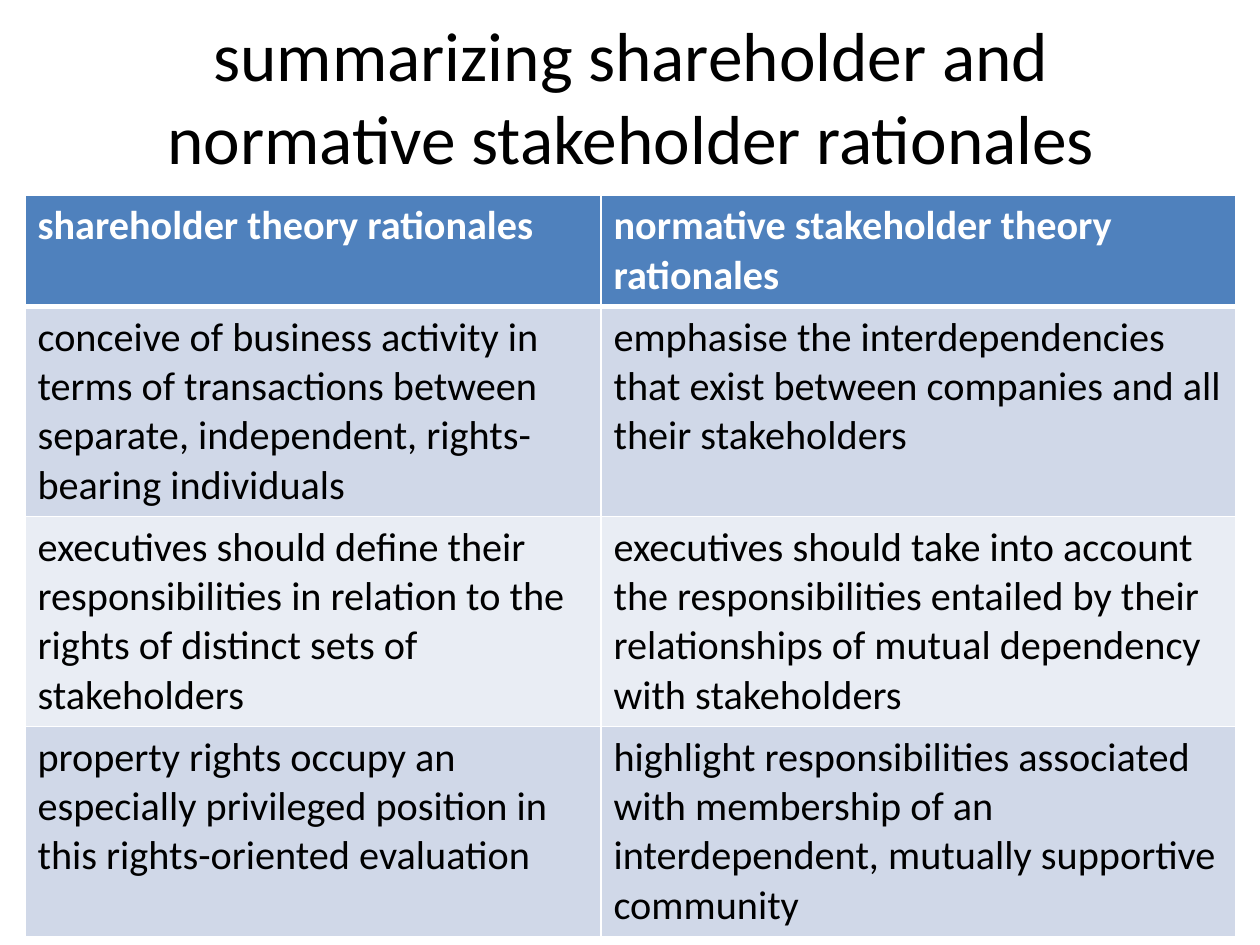
import pptx
import pptx.util
import pptx.dml.color
import pptx.enum.text
import pptx.oxml
import pptx.oxml.ns

SCALE = 914400 / 126
FONT = "Calibri"
WHITE, BLACK, BLUE = "FFFFFF", "000000", "4F81BD"
BANDS = ["D0D8E8", "E9EDF4"]
TITLE = "summarizing shareholder and normative stakeholder rationales"
ROWS = [
    ("shareholder theory rationales",
     "normative stakeholder theory rationales"),
    ("conceive of business activity in terms of transactions between "
     "separate, independent, rights-bearing individuals",
     "emphasise the interdependencies that exist between companies "
     "and all their stakeholders"),
    ("executives should define their responsibilities in relation to "
     "the rights of distinct sets of stakeholders",
     "executives should take into account the responsibilities entailed "
     "by their relationships of mutual dependency with stakeholders"),
    ("property rights occupy an especially privileged position in this "
     "rights-oriented evaluation",
     "highlight responsibilities associated with membership of an "
     "interdependent, mutually supportive community"),
]


def px(num):
    return pptx.util.Emu(round(num * SCALE))


def color(code):
    return pptx.dml.color.RGBColor.from_string(code)


def add_run(para, text, size, code, bold=False):
    run = para.add_run()
    run.text = text
    run.font.name = FONT
    run.font.size = pptx.util.Pt(size)
    run.font.bold = bold
    run.font.color.rgb = color(code)


def add_edge(cell, side, width):
    xml = (f'<a:{side} {pptx.oxml.ns.nsdecls("a")} w="{pptx.util.Pt(width)}">'
           f'<a:solidFill><a:srgbClr val="{WHITE}"/></a:solidFill></a:{side}>')
    cell._tc.get_or_add_tcPr().append(pptx.oxml.parse_xml(xml))


def add_title(slide, box):
    title = slide.shapes.title
    title.left, title.top, title.width, title.height = map(px, box)
    frame = title.text_frame
    frame.word_wrap = True
    frame.auto_size = pptx.enum.text.MSO_AUTO_SIZE.NONE
    frame.vertical_anchor = pptx.enum.text.MSO_ANCHOR.MIDDLE
    para = frame.paragraphs[0]
    para.alignment = pptx.enum.text.PP_ALIGN.CENTER
    add_run(para, TITLE, 39.6, BLACK)


def fill_cell(cell, text, row):
    head = row == 0
    for side in ("lnL", "lnR", "lnT", "lnB"):
        thick = (head and side == "lnB") or (row == 1 and side == "lnT")
        add_edge(cell, side, 3 if thick else 1)
    cell.fill.solid()
    cell.fill.fore_color.rgb = color(BLUE if head else BANDS[(row - 1) % 2])
    add_run(cell.text_frame.paragraphs[0], text, 23,
            WHITE if head else BLACK, head)


def add_grid(slide, box, split, least):
    left, top, width, height = box
    frame = slide.shapes.add_table(len(ROWS), 2, *map(px, box))
    table = frame.table
    for col, size in zip(table.columns, (split, width - split)):
        col.width = px(size)
    for row, texts in enumerate(ROWS):
        table.rows[row].height = px(least)
        for col, text in enumerate(texts):
            fill_cell(table.cell(row, col), text, row)
    frame.height = px(height)


def main():
    deck = pptx.Presentation()
    deck.slide_width, deck.slide_height = px(1260), px(945)
    slide = deck.slides.add_slide(deck.slide_layouts[5])
    add_title(slide, (64, 16, 1134, 158))
    add_grid(slide, (25, 195, 1211, 727), 576, 52)
    deck.save("out.pptx")


if __name__ == "__main__":
    main()
